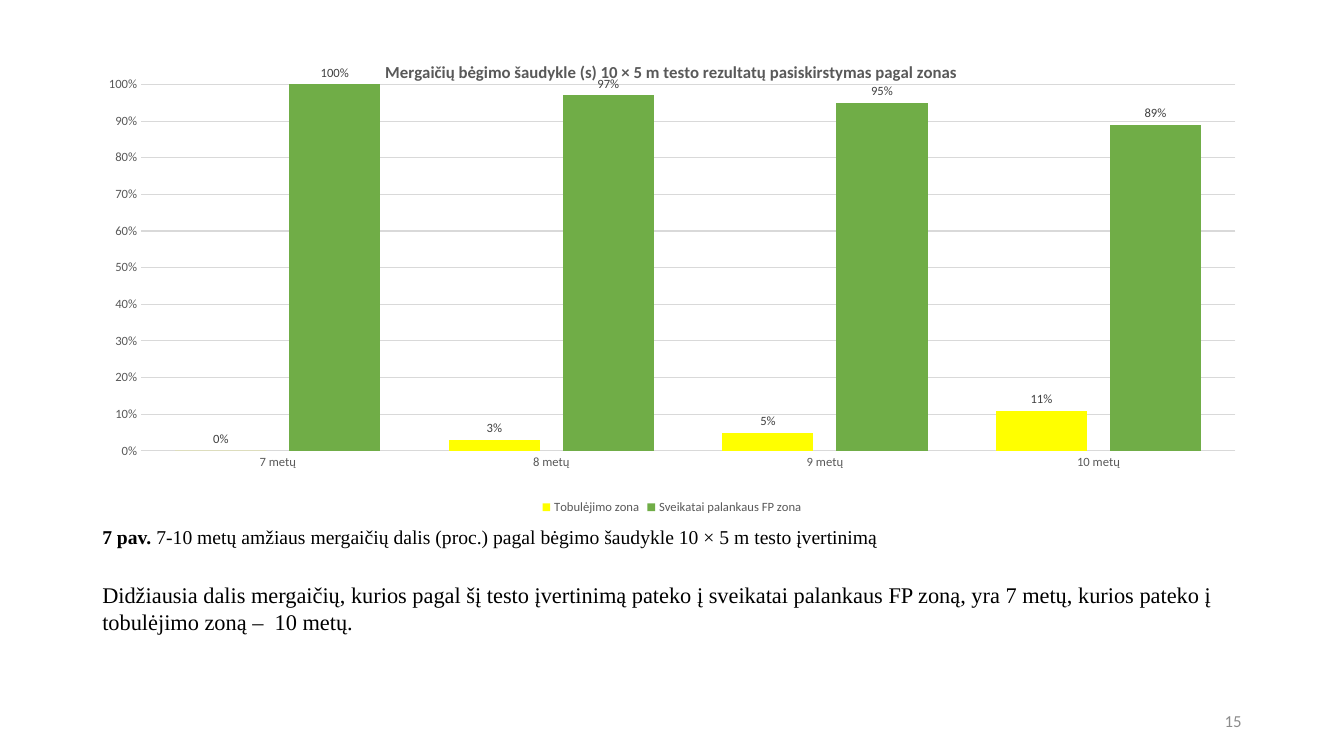
from lxml.etree import SubElement, Element
from pptx import Presentation
from pptx.chart.data import CategoryChartData
from pptx.dml.color import RGBColor
from pptx.enum.chart import XL_CHART_TYPE, XL_LABEL_POSITION, XL_LEGEND_POSITION, XL_TICK_MARK
from pptx.enum.text import MSO_ANCHOR, PP_ALIGN
from pptx.oxml.ns import qn
from pptx.util import Pt

PX = 9525
BLACK = RGBColor(0, 0, 0)
GREY = RGBColor(0x59, 0x59, 0x59)
DARK = RGBColor(0x40, 0x40, 0x40)
PALE = RGBColor(0xD9, 0xD9, 0xD9)
MUTED = RGBColor(0x8C, 0x8C, 0x8C)
YELLOW = RGBColor(0xFF, 0xFF, 0)
GREEN = RGBColor(0x70, 0xAD, 0x47)
SERIF = "Times New Roman"
SANS = "Calibri"

AGES = ["7 metų", "8 metų", "9 metų", "10 metų"]
ZONES = [
    ("Tobulėjimo zona", (0, 0.03, 0.05, 0.11), YELLOW),
    ("Sveikatai palankaus FP zona", (1, 0.97, 0.95, 0.89), GREEN),
]
HEAD = "Mergaičių bėgimo šaudykle (s) 10 × 5 m testo rezultatų pasiskirstymas pagal zonas"
CAPTION = [
    ("7 pav. ", True),
    ("7-10 metų amžiaus mergaičių dalis (proc.) pagal bėgimo šaudykle 10 × 5 m testo įvertinimą", False),
]
FINDING = [(
    "Didžiausia dalis mergaičių, kurios pagal šį testo įvertinimą pateko į sveikatai "
    "palankaus FP zoną, yra 7 metų, kurios pateko į tobulėjimo zoną –  10 metų.", False)]


def scale(*box):
    return [n * PX for n in box]


def style(font, size, color, face=SANS, bold=False):
    font.size = Pt(size)
    font.name = face
    font.bold = bold
    font.color.rgb = color


def add_text(slide, box, runs, size, color, face, anchor=MSO_ANCHOR.MIDDLE,
             align=PP_ALIGN.LEFT, space=1.0):
    frame = slide.shapes.add_textbox(*scale(*box)).text_frame
    frame.word_wrap = True
    frame.vertical_anchor = anchor
    para = frame.paragraphs[0]
    para.alignment = align
    para.line_spacing = space
    for text, bold in runs:
        run = para.add_run()
        run.text = text
        style(run.font, size, color, face, bold)


def set_place(parent, index, **parts):
    old = parent.find(qn("c:layout"))
    if old is not None:
        parent.remove(old)
    layout = Element(qn("c:layout"))
    manual = SubElement(layout, qn("c:manualLayout"))
    for name, value in parts.items():
        SubElement(manual, qn("c:" + name)).set("val", str(value))
    parent.insert(index, layout)


def style_axis(axis):
    axis.major_tick_mark = XL_TICK_MARK.NONE
    axis.minor_tick_mark = XL_TICK_MARK.NONE
    style(axis.tick_labels.font, 9, GREY)


def style_line(line):
    line.color.rgb = PALE
    line.width = Pt(0.75)


def style_zone(zone, color):
    zone.format.fill.solid()
    zone.format.fill.fore_color.rgb = color
    zone.invert_if_negative = False
    labels = zone.data_labels
    labels.show_value = True
    labels.position = XL_LABEL_POSITION.OUTSIDE_END
    labels.number_format = "0%"
    labels.number_format_is_linked = False
    style(labels.font, 9, DARK)


def add_bars(slide, box):
    data = CategoryChartData(number_format="0%")
    data.categories = AGES
    for name, values, _ in ZONES:
        data.add_series(name, values)
    chart = slide.shapes.add_chart(
        XL_CHART_TYPE.COLUMN_CLUSTERED, *scale(*box), data).chart
    style(chart.font, 10, BLACK)

    run = chart.chart_title.text_frame.paragraphs[0].add_run()
    run.text = HEAD
    style(run.font, 12, GREY, bold=True)
    chart.chart_title.include_in_layout = False

    chart.has_legend = True
    chart.legend.position = XL_LEGEND_POSITION.BOTTOM
    chart.legend.include_in_layout = False
    style(chart.legend.font, 9, GREY)

    ages, share = chart.category_axis, chart.value_axis
    style_axis(ages)
    style_line(ages.format.line)
    style_axis(share)
    share.format.line.fill.background()
    share.minimum_scale, share.maximum_scale, share.major_unit = 0, 1, 0.1
    share.tick_labels.number_format = "0%"
    share.tick_labels.number_format_is_linked = False
    style_line(share.major_gridlines.format.line)

    plot = chart.plots[0]
    plot.gap_width, plot.overlap = 75, -25
    plot.vary_by_categories = False
    for zone, (_, _, color) in zip(plot.series, ZONES):
        style_zone(zone, color)

    root = chart.element.find(qn("c:chart"))
    set_place(root.find(qn("c:title")), 1, xMode="edge", yMode="edge", x=0.25, y=0.04)
    set_place(root.find(qn("c:plotArea")), 0, layoutTarget="inner", xMode="edge",
              yMode="edge", x=0.042, y=0.095, w=0.944, h=0.764)


def main():
    deck = Presentation()
    deck.slide_width, deck.slide_height = scale(1280, 720)
    slide = deck.slides.add_slide(deck.slide_layouts[6])
    add_bars(slide, (88, 37, 1104, 457))
    add_text(slide, (88, 498, 1104, 29), CAPTION, 14, BLACK, SERIF, space=0.9)
    add_text(slide, (88, 549, 1163, 61), FINDING, 16, BLACK, SERIF, anchor=MSO_ANCHOR.TOP)
    add_text(slide, (904, 667, 288, 38), [("15", False)], 12, MUTED, SANS, align=PP_ALIGN.RIGHT)
    deck.save("out.pptx")


if __name__ == "__main__":
    main()
